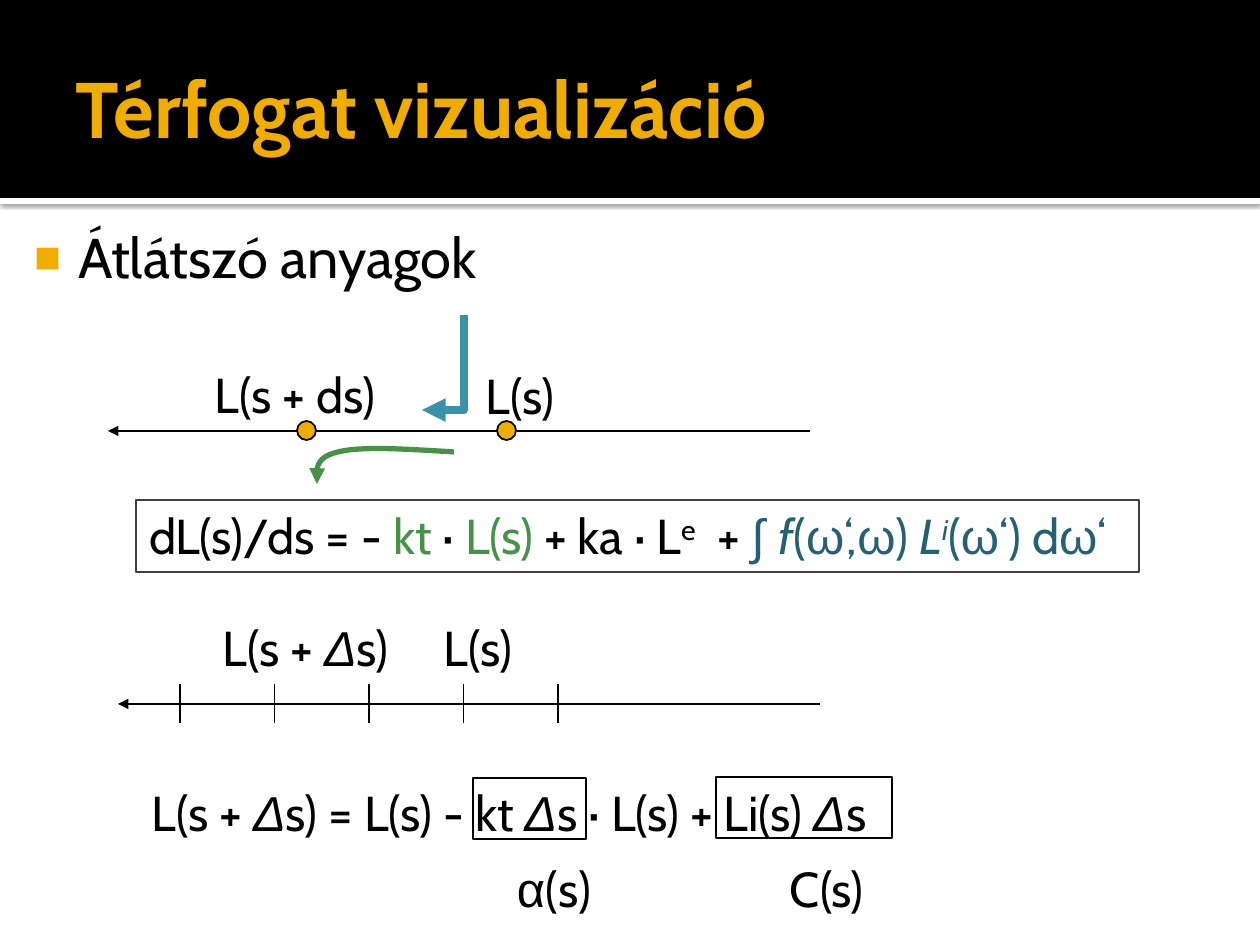
from lxml import etree
from pptx import Presentation
from pptx.dml.color import RGBColor
from pptx.enum.shapes import MSO_CONNECTOR, MSO_SHAPE
from pptx.enum.text import MSO_ANCHOR, MSO_AUTO_SIZE, PP_ALIGN
from pptx.oxml.ns import qn
from pptx.util import Emu, Pt

RECT, OVAL = MSO_SHAPE.RECTANGLE, MSO_SHAPE.OVAL
STRAIGHT = MSO_CONNECTOR.STRAIGHT
LEFT, MIDDLE, TOP = PP_ALIGN.LEFT, MSO_ANCHOR.MIDDLE, MSO_ANCHOR.TOP
NO_FIT, GROW = MSO_AUTO_SIZE.NONE, MSO_AUTO_SIZE.SHAPE_TO_FIT_TEXT
PX = 914400 / 126
COLORS = {name: RGBColor.from_string(value) for name, value in {
    "black": "000000", "white": "FFFFFF", "gold": "F0AD00", "grey": "404040",
    "green": "479249", "teal": "246172", "blue": "3792AA"}.items()}


def px(*lengths):
    return [Emu(round(n * PX)) for n in lengths]


def write(tf, runs, size=28, insets=(13, 6, 13, 6), anchor=TOP, wrap=False):
    """Runs are (text, colour, style); style may hold i, b and ^ (superscript)."""
    tf.word_wrap = wrap
    tf.auto_size = NO_FIT if wrap else GROW
    tf.vertical_anchor = anchor
    tf.margin_left, tf.margin_top, tf.margin_right, tf.margin_bottom = px(*insets)
    p = tf.paragraphs[0]
    p.alignment = LEFT
    for text, color, style in runs:
        r = p.add_run()
        r.text = text
        r.font.name = "Arial" if text.strip() in "Δωα∫" else "Cabin"
        r.font.size = Pt(size)
        r.font.bold = "b" in style
        r.font.italic = "i" in style
        r.font.color.rgb = COLORS[color]
        if "^" in style:
            r._r.get_or_add_rPr().set("baseline", "30000")
    return p


prs = Presentation()
prs.slide_width, prs.slide_height = px(1260, 945)
s = prs.slides.add_slide(prs.slide_layouts[5])

# Header band with a shadowed white strip below it
for box, color in (((0, 198, 1260, 6), "white"), ((0, 0, 1260, 198), "black")):
    sp = s.shapes.add_shape(RECT, *px(*box))
    sp.shadow.inherit = False
    sp.fill.solid()
    sp.fill.fore_color.rgb = COLORS[color]
    sp.line.fill.background()
    if color == "white":
        effects = sp._element.spPr.find(qn("a:effectLst"))
        shadow = etree.SubElement(effects, qn("a:outerShdw"), blurRad="31750",
                                  dist="10160", dir="5400000", rotWithShape="0")
        clr = etree.SubElement(shadow, qn("a:srgbClr"), val="000000")
        etree.SubElement(clr, qn("a:alpha"), val="60000")

# Title, brought in front of the band
title = s.shapes.title
title.left, title.top, title.width, title.height = px(63, 21, 1134, 173)
write(title.text_frame, [("Térfogat vizualizáció", "gold", "b")], 45,
      (13, 6, 6, 6), MIDDLE, True)
s.shapes._spTree.append(title._element)

# Bullet
tb = s.shapes.add_textbox(*px(10, 210, 1239, 725))
p = write(tb.text_frame, [("Átlátszó anyagok", "black", "")], 32, (8, 13, 13, 6), TOP, True)
pPr = p._p.get_or_add_pPr()
pPr.set("marL", str(px(60)[0]))
pPr.set("indent", str(px(-44)[0]))
bu_clr = etree.SubElement(pPr, qn("a:buClr"))
etree.SubElement(bu_clr, qn("a:srgbClr"), val=str(COLORS["gold"]))
etree.SubElement(pPr, qn("a:buSzPct"), val="80000")
etree.SubElement(pPr, qn("a:buFont"), typeface="Arial")
etree.SubElement(pPr, qn("a:buChar"), char="■")

# Rays with an arrowhead at the left, and tick marks on the lower one
rays = [(108, 431, 810, 431), (118, 704, 820, 704)]
ticks = [(180 + 94.5 * i, 684, 180 + 94.5 * i, 723) for i in range(5)]
for ends in rays + ticks:
    line = s.shapes.add_connector(STRAIGHT, *px(*ends))
    line.line.width = Pt(1)
    line.line.color.rgb = COLORS["black"]
    if ends in rays:
        etree.SubElement(line.line._get_or_add_ln(), qn("a:headEnd"), type="triangle")
    etree.SubElement(line._element.spPr, qn("a:effectLst"))

# Sample points on the upper ray
for x in (297, 497):
    dot = s.shapes.add_shape(OVAL, *px(x, 421, 19, 19))
    dot.shadow.inherit = False
    dot.fill.solid()
    dot.fill.fore_color.rgb = COLORS["gold"]
    dot.line.color.rgb = COLORS["black"]
    dot.line.width = Pt(1)

# Frames: the differential equation and the two marked terms
equation = [
    ("dL(s)/ds = - ", "black", ""), ("kt ", "green", ""), ("· ", "black", ""),
    ("L(s)", "green", ""), (" + ka · L", "black", ""), ("e", "black", "^"),
    ("  + ", "black", ""), ("∫ ", "teal", ""), ("f", "teal", "i"), ("(", "teal", ""),
    ("ω", "teal", ""), ("‘,", "teal", ""), ("ω", "teal", ""), (")", "teal", ""),
    (" L", "teal", "i"), ("i", "teal", "i^"), ("(", "teal", ""), ("ω", "teal", ""),
    ("‘) d", "teal", ""), ("ω", "teal", ""), ("‘", "teal", "")]
for box, color, runs in (((136, 500, 1003, 72), "grey", equation),
                         ((473, 778, 113, 61), "black", None),
                         ((716, 777, 176, 61), "black", None)):
    frame = s.shapes.add_shape(RECT, *px(*box))
    frame.shadow.inherit = False
    frame.fill.background()
    frame.line.color.rgb = COLORS[color]
    frame.line.width = Pt(1)
    if runs:
        write(frame.text_frame, runs)

# Labels and the discrete equation; Δ is set in italics
for box, parts in (
        ((202, 358, 203, 71), ["L(s + ds)"]),
        ((473, 359, 107, 71), ["L(s)"]),
        ((210, 611, 208, 71), ["L(s + ", "Δ", "s)"]),
        ((431, 611, 107, 71), ["L(s)"]),
        ((139, 777, 814, 71),
         ["L(s + ", "Δ", "s) = L(s) - kt ", "Δ", "s · L(s) + Li(s) ", "Δ", "s"]),
        ((777, 853, 110, 71), ["C(s)"]),
        ((504, 853, 107, 71), ["α", "(s)"])):
    tb = s.shapes.add_textbox(*px(*box))
    write(tb.text_frame, [(t, "black", "i" if t == "Δ" else "") for t in parts])

# In-scattering elbow and attenuation curve (two cubic Béziers, sampled)
elbow = [(464, 315), (464, 410), (422, 410)]
curve = [(454, 452)]
for bezier in (((454, 452), (407, 449), (360, 446), (338, 452)),
               ((338, 452), (315, 457), (316, 470), (317, 484))):
    for i in range(1, 13):
        t = i / 12
        weights = ((1 - t) ** 3, 3 * t * (1 - t) ** 2, 3 * t * t * (1 - t), t ** 3)
        curve.append(tuple(sum(w * pt[k] for w, pt in zip(weights, bezier)) for k in (0, 1)))
for points, color, width in ((elbow, "blue", 4.5), (curve, "green", 3)):
    start, *rest = [px(*pt) for pt in points]
    builder = s.shapes.build_freeform(*start)
    builder.add_line_segments(rest, close=False)
    arrow = builder.convert_to_shape()
    arrow.shadow.inherit = False
    arrow.fill.background()
    arrow.line.color.rgb = COLORS[color]
    arrow.line.width = Pt(width)
    etree.SubElement(arrow.line._get_or_add_ln(), qn("a:tailEnd"), type="triangle")

prs.save("out.pptx")
